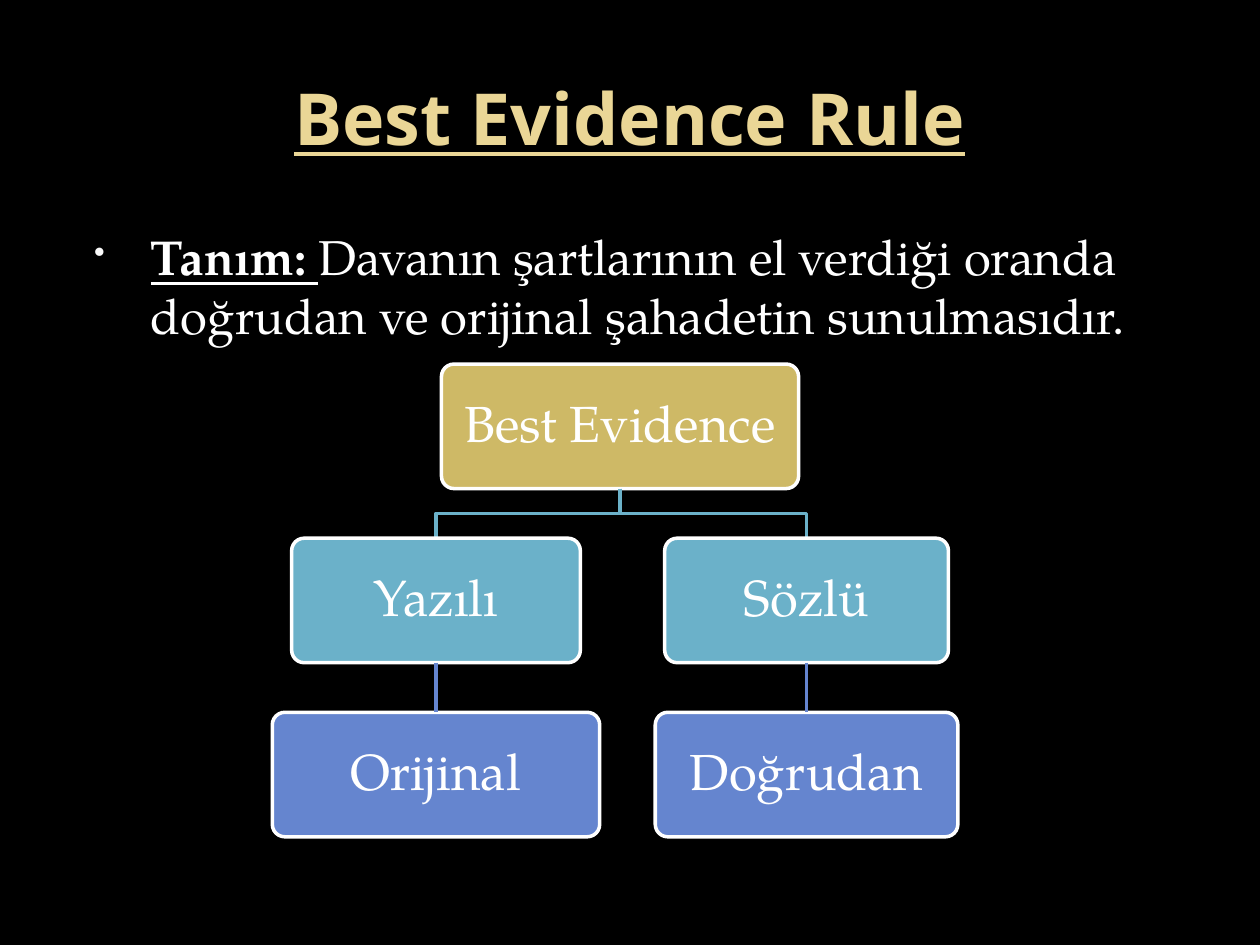
import pptx
import pptx.dml.color
import pptx.enum.shapes
import pptx.enum.text
import pptx.oxml
import pptx.oxml.ns
import pptx.util
from pptx.util import Cm, Pt

RGBColor = pptx.dml.color.RGBColor
BLACK = RGBColor(0x00, 0x00, 0x00)
WHITE = RGBColor(0xFF, 0xFF, 0xFF)
CREAM = RGBColor(0xEA, 0xD6, 0x96)
GOLD = RGBColor(0xCE, 0xB9, 0x66)
TEAL = RGBColor(0x6B, 0xB1, 0xC9)
BLUE = RGBColor(0x65, 0x85, 0xCF)
TITLE_FONT, BODY_FONT = "Noto Sans", "TeX Gyre Pagella"

# Content
TITLE = "Best Evidence Rule"
TERM = "Tanım: "
DEFINITION = "Davanın şartlarının el verdiği oranda doğrudan ve orijinal şahadetin sunulmasıdır."

# Tree: label, width in cm; each branch has a centre and a chain of boxes
ROOT = ("Best Evidence", 7.2)
ROOT_CENTRE = 12.5
BRANCHES = [
    (8.79, [("Yazılı", 5.82), ("Orijinal", 6.6)]),
    (16.26, [("Sözlü", 5.72), ("Doğrudan", 6.1)]),
]
LEVEL_COLORS = [GOLD, TEAL, BLUE]
TREE_TOP, BOX_HEIGHT, LEVEL_STEP = 7.34, 2.51, 3.51


def style_run(run, font, size, color, bold=False, underline=False):
    run.font.name = font
    run.font.size = Pt(size)
    run.font.color.rgb = color
    run.font.bold = bold
    run.font.underline = underline


def add_text_box(slide, left, top, width, height):
    frame = slide.shapes.add_textbox(Cm(left), Cm(top), Cm(width), Cm(height)).text_frame
    frame.word_wrap = True
    return frame


def add_box(slide, label, width, centre, level):
    box = slide.shapes.add_shape(
        pptx.enum.shapes.MSO_SHAPE.ROUNDED_RECTANGLE,
        Cm(centre - width / 2), Cm(TREE_TOP + level * LEVEL_STEP), Cm(width), Cm(BOX_HEIGHT))
    box.adjustments[0] = 0.1
    box.shadow.inherit = False
    box.fill.solid()
    box.fill.fore_color.rgb = LEVEL_COLORS[level]
    box.line.color.rgb = WHITE
    box.line.width = Pt(2)
    frame = box.text_frame
    frame.text = label
    frame.word_wrap = True
    frame.margin_left = frame.margin_right = Cm(0.2)
    frame.vertical_anchor = pptx.enum.text.MSO_ANCHOR.MIDDLE
    paragraph = frame.paragraphs[0]
    paragraph.alignment = pptx.enum.text.PP_ALIGN.CENTER
    paragraph.line_spacing = 0.9
    style_run(paragraph.runs[0], BODY_FONT, 29, WHITE)
    return box


def add_elbow(slide, centre):
    top = TREE_TOP + BOX_HEIGHT
    bottom = TREE_TOP + LEVEL_STEP
    middle = (top + bottom) / 2
    builder = slide.shapes.build_freeform(Cm(ROOT_CENTRE), Cm(top))
    builder.add_line_segments(
        [(Cm(ROOT_CENTRE), Cm(middle)), (Cm(centre), Cm(middle)), (Cm(centre), Cm(bottom))],
        close=False)
    elbow = builder.convert_to_shape()
    elbow.shadow.inherit = False
    elbow.fill.background()
    elbow.line.color.rgb = LEVEL_COLORS[1]
    elbow.line.width = Pt(2)


def add_stem(slide, upper, lower):
    stem = slide.shapes.add_connector(pptx.enum.shapes.MSO_CONNECTOR.STRAIGHT, 0, 0, 0, 0)
    stem.begin_connect(upper, 2)
    stem.end_connect(lower, 0)
    stem.line.color.rgb = LEVEL_COLORS[2]
    stem.line.width = Pt(2)
    stem._element.spPr.append(pptx.oxml.parse_xml(
        "<a:effectLst %s/>" % pptx.oxml.ns.nsdecls("a")))


def add_bullet(paragraph):
    properties = paragraph._p.get_or_add_pPr()
    properties.set("marL", str(Cm(1.52)))
    properties.set("indent", str(Cm(-1.14)))
    namespace = pptx.oxml.ns.nsdecls("a")
    for xml in ('<a:buClr %s><a:srgbClr val="F9F9F9"/></a:buClr>',
                '<a:buSzPct %s val="65000"/>',
                '<a:buChar %s char="•"/>'):
        properties.append(pptx.oxml.parse_xml(xml % namespace))


def main():
    presentation = pptx.Presentation()
    presentation.slide_width, presentation.slide_height = Cm(25.4), Cm(19.05)
    slide = presentation.slides.add_slide(presentation.slide_layouts[6])
    slide.background.fill.solid()
    slide.background.fill.fore_color.rgb = BLACK

    # Title
    frame = add_text_box(slide, 1.27, 0.76, 22.86, 3.18)
    frame.text = TITLE
    frame.vertical_anchor = pptx.enum.text.MSO_ANCHOR.MIDDLE
    frame.paragraphs[0].alignment = pptx.enum.text.PP_ALIGN.CENTER
    style_run(frame.paragraphs[0].runs[0], TITLE_FONT, 41, CREAM, True, True)

    # Definition
    paragraph = add_text_box(slide, 1.27, 4.45, 22.86, 13.08).paragraphs[0]
    paragraph.space_before = Pt(5.6)
    add_bullet(paragraph)
    for text, strong in ((TERM, True), (DEFINITION, False)):
        run = paragraph.add_run()
        run.text = text
        style_run(run, BODY_FONT, 28, WHITE, strong, strong)

    # Evidence tree
    add_box(slide, *ROOT, ROOT_CENTRE, 0)
    for centre, chain in BRANCHES:
        add_elbow(slide, centre)
        upper, lower = [add_box(slide, label, width, centre, level)
                        for level, (label, width) in enumerate(chain, 1)]
        add_stem(slide, upper, lower)

    presentation.save("out.pptx")


if __name__ == "__main__":
    main()
